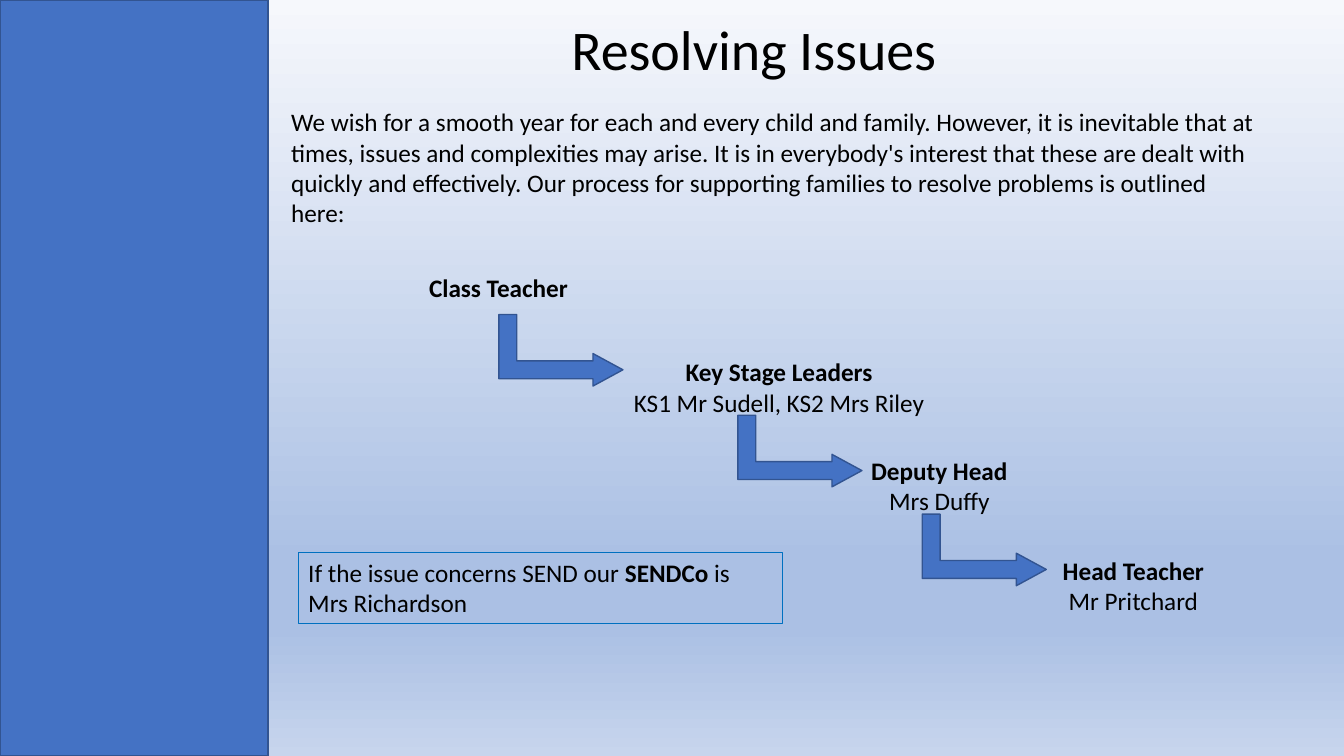
from lxml.etree import SubElement
from pptx import Presentation
from pptx.dml.color import RGBColor
from pptx.enum.shapes import MSO_SHAPE as SHAPE
from pptx.enum.text import MSO_ANCHOR as ANCHOR, MSO_AUTO_SIZE as FIT, PP_ALIGN as ALIGN
from pptx.oxml.ns import qn
from pptx.util import Pt

BLACK, BLUE, DARK_BLUE, BOX_BLUE = "000000", "4472C4", "325491", "0070C0"
BACKGROUND = [(0, "F6F8FC"), (74, "ABC0E4"), (83, "ABC0E4"), (100, "C7D5ED")]

# A paragraph is a list of (text, bold) runs.
TITLE = [[("Resolving Issues", False)]]
INTRO = [[(
    "We wish for a smooth year for each and every child and family. However, it is "
    "inevitable that at times, issues and complexities may arise. It is in everybody's "
    "interest that these are dealt with quickly and effectively. Our process for "
    "supporting families to resolve problems is outlined here:", False)]]
SENDCO = [[("If the issue concerns SEND our ", False), ("SENDCo", True),
           (" is Mrs Richardson", False)]]

# role, names, left, top, width
STEPS = [
    ("Class Teacher", None, 294.5, 190.8, 123.1),
    ("Key Stage Leaders", "KS1 Mr Sudell, KS2 Mrs Riley", 435.6, 251.3, 241.9),
    ("Deputy Head", "Mrs Duffy", 595.4, 321.8, 151.2),
    ("Head Teacher", "Mr Pritchard", 725, 393.1, 169.2),
]
ARROWS = [(375.1, 205.9), (545.8, 277.9), (677.5, 348.5)]
ARROW_W, ARROW_H = 51.1, 88.6
ARROW_ADJUST = (0.25, 0.227, 0.419)
LINE_H, INSET_H = 21.9, 7.2


def color(value):
    return RGBColor.from_string(value)


def add_shape(slide, kind, box, fill, line, line_width):
    sp = slide.shapes.add_shape(kind, *map(Pt, box))
    sp.shadow.inherit = False
    if fill:
        sp.fill.solid()
        sp.fill.fore_color.rgb = color(fill)
    else:
        sp.fill.background()
    sp.line.color.rgb = color(line)
    sp.line.width = Pt(line_width)
    return sp


def write(sp, paragraphs, size=18, align=ALIGN.LEFT, wrap=True, anchor=ANCHOR.TOP):
    tf = sp.text_frame
    tf.auto_size = FIT.NONE
    tf.word_wrap = wrap
    tf.vertical_anchor = anchor
    for i, runs in enumerate(paragraphs):
        p = tf.add_paragraph() if i else tf.paragraphs[0]
        p.alignment = align
        for text, bold in runs:
            r = p.add_run()
            r.text = text
            r.font.name = "Calibri"
            r.font.size = Pt(size)
            r.font.bold = bold
            r.font.color.rgb = color(BLACK)


def add_text(slide, box, paragraphs, **style):
    write(slide.shapes.add_textbox(*map(Pt, box)), paragraphs, **style)


def paint_background(slide):
    fill = slide.background.fill
    fill.gradient()
    fill.gradient_angle = 270
    stops = slide.element.find(".//" + qn("a:gsLst"))
    for stop in list(stops):
        stops.remove(stop)
    for percent, value in BACKGROUND:
        stop = SubElement(stops, qn("a:gs"), pos=str(percent * 1000))
        SubElement(stop, qn("a:srgbClr"), val=value)


def main():
    prs = Presentation()
    prs.slide_width, prs.slide_height = Pt(960), Pt(540)
    slide = prs.slides.add_slide(prs.slide_layouts[5])
    paint_background(slide)

    add_shape(slide, SHAPE.RECTANGLE, (0, 0, 191.5, 540), BLUE, DARK_BLUE, 1)

    title = slide.shapes.title
    title.left, title.top, title.width, title.height = map(Pt, (401, 6.5, 278, 55.5))
    write(title, TITLE, size=40, wrap=False)

    add_text(slide, (200.9, 72.7, 706.3, 94.3), INTRO)

    for role, names, left, top, width in STEPS:
        lines = [[(role, True)]] + ([[(names, False)]] if names else [])
        height = INSET_H + LINE_H * len(lines)
        add_text(slide, (left, top, width, height), lines, align=ALIGN.CENTER)

    for left, top in ARROWS:
        arrow = add_shape(slide, SHAPE.BENT_UP_ARROW, (left, top, ARROW_W, ARROW_H),
                          BLUE, DARK_BLUE, 1)
        arrow.rotation = 90
        for i, value in enumerate(ARROW_ADJUST):
            arrow.adjustments[i] = value

    box = add_shape(slide, SHAPE.RECTANGLE, (213.1, 394.6, 345.6, 51.1),
                    None, BOX_BLUE, 0.75)
    write(box, SENDCO)

    prs.save("out.pptx")


if __name__ == "__main__":
    main()
